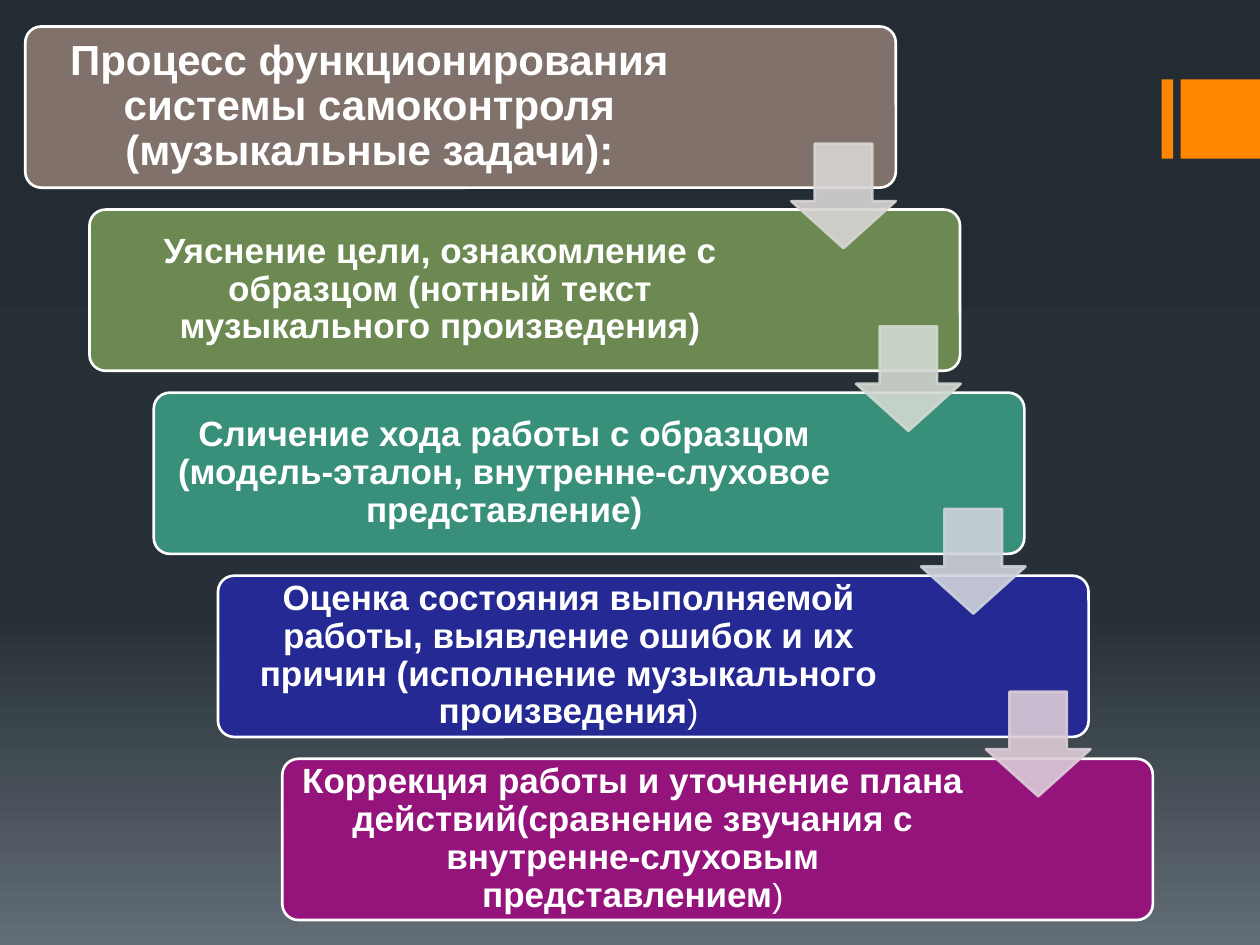
from copy import deepcopy

from lxml import etree
from pptx import Presentation
from pptx import util as u
from pptx.dml.color import RGBColor
from pptx.enum import shapes, text
from pptx.oxml.ns import qn

WHITE = RGBColor(0xFF, 0xFF, 0xFF)
ORANGE = RGBColor(0xFF, 0x86, 0x00)
BACKDROP = [
    (0, RGBColor(0x24, 0x2C, 0x33)),
    (0.65, RGBColor(0x27, 0x30, 0x37)),
    (1, RGBColor(0x63, 0x6D, 0x76)),
]
# Card colour, bold text, plain ending
STEPS = [
    (RGBColor(0x80, 0x71, 0x6A),
     "Процесс функционирования системы самоконтроля (музыкальные задачи):", ""),
    (RGBColor(0x6B, 0x89, 0x50),
     "Уяснение цели, ознакомление с образцом (нотный текст музыкального произведения)", ""),
    (RGBColor(0x39, 0x90, 0x7A),
     "Сличение хода работы с образцом (модель-эталон, внутренне-слуховое представление)", ""),
    (RGBColor(0x25, 0x29, 0x93),
     "Оценка состояния выполняемой работы, выявление ошибок и их причин "
     "(исполнение музыкального произведения", ")"),
    (RGBColor(0x94, 0x14, 0x7C),
     "Коррекция работы и уточнение плана действий(сравнение звучания с "
     "внутренне-слуховым представлением", ")"),
]
ARROWS = [
    RGBColor(0xD8, 0xD5, 0xD4),
    RGBColor(0xD2, 0xD9, 0xD1),
    RGBColor(0xCF, 0xD3, 0xDB),
    RGBColor(0xDC, 0xCC, 0xD7),
]

prs = Presentation()
prs.slide_width, prs.slide_height = u.Inches(10), u.Inches(7.5)
s = prs.slides.add_slide(prs.slide_layouts[5])

# All lengths are percentages of the slide width
COL, ROW = 5.1, 14.53
CARD_W, CARD_H = 69.1, 12.8
ARROW = 8.3


def box(*lengths):
    """Turn percentages of the slide width into slide units."""
    return [int(prs.slide_width * n / 100) for n in lengths]


def add_shape(kind, place, fill, line=None):
    sp = s.shapes.add_shape(kind, *box(*place))
    sp.shadow.inherit = False
    sp.fill.solid()
    sp.fill.fore_color.rgb = fill
    if line is None:
        sp.line.fill.background()
    else:
        sp.line.color.rgb = line
        sp.line.width = u.Pt(1.5)
    return sp


# Background gradient, top to bottom
bg = s.background.fill
bg.gradient()
bg.gradient_angle = 270
stops = s.element.find(".//" + qn("a:gsLst"))
stops.append(deepcopy(stops[-1]))
for stop, (position, color) in zip(bg.gradient_stops, BACKDROP):
    stop.position = position
    stop.color.rgb = color

# Orange accent at the right edge
for left, width in ((92.2, 0.9), (93.7, 6.3)):
    add_shape(shapes.MSO_SHAPE.RECTANGLE, (left, 6.3, width, 6.3), ORANGE)

# Staircase of cards; the first one carries the title
for i, (color, words, ending) in enumerate(STEPS):
    x, y = 2 + i * COL, 2.1 + i * ROW
    card = add_shape(shapes.MSO_SHAPE.ROUNDED_RECTANGLE, (x, y, CARD_W, CARD_H), color, WHITE)
    card.adjustments[0] = 0.1

    place = box(x + 0.37, y + 0.37, 54.9 if i else 53.9, 12)
    if i == 0:
        label = s.shapes.title
        label.left, label.top, label.width, label.height = place
        card.element.addnext(label.element)
    else:
        label = s.shapes.add_textbox(*place)
    tf = label.text_frame
    tf.word_wrap = True
    tf.auto_size = text.MSO_AUTO_SIZE.NONE
    tf.vertical_anchor = text.MSO_ANCHOR.MIDDLE
    inset = u.Inches(0.08 if i else 0.1)
    tf.margin_left = tf.margin_right = tf.margin_top = tf.margin_bottom = inset

    p = tf.paragraphs[0]
    p.text = words
    p.alignment = text.PP_ALIGN.CENTER
    p.line_spacing = 0.9
    if ending:
        p.add_run().text = ending
    for r, size, bold in zip(p.runs, (20 if i else 24, 19), (True, False)):
        r.font.name = "Arial"
        r.font.size = u.Pt(size)
        r.font.bold = bold
        r.font.color.rgb = WHITE

# Translucent arrows, flush with the right edge of the card above
for i, color in enumerate(ARROWS):
    place = (62.8 + i * 5.15, 11.4 + i * 14.5, ARROW, ARROW)
    arrow = add_shape(shapes.MSO_SHAPE.DOWN_ARROW, place, color, color)
    arrow.adjustments[0], arrow.adjustments[1] = 0.55, 0.45
    for clr in arrow.element.spPr.iter(qn("a:srgbClr")):
        etree.SubElement(clr, qn("a:alpha"), val="90000")

prs.save("out.pptx")
